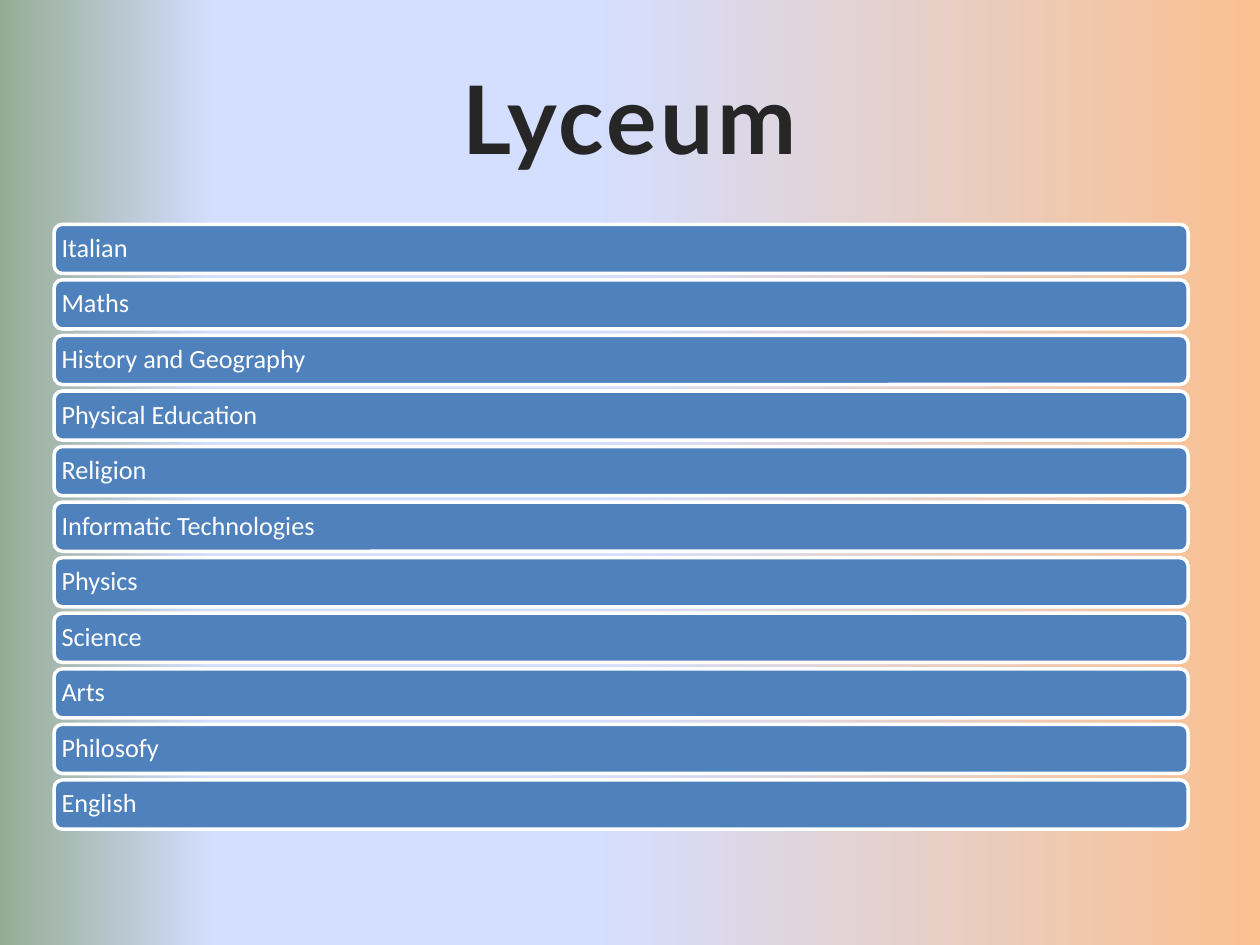
import dataclasses
import lxml.etree
import pptx
import pptx.dml.color
import pptx.enum.shapes
import pptx.enum.text
import pptx.oxml.ns
import pptx.util

Inches = pptx.util.Inches
Pt = pptx.util.Pt
RGBColor = pptx.dml.color.RGBColor
Align = pptx.enum.text.PP_ALIGN
qn = pptx.oxml.ns.qn

WHITE = RGBColor(0xFF, 0xFF, 0xFF)
BLUE = RGBColor(0x4F, 0x81, 0xBD)
DARK = RGBColor(0x26, 0x26, 0x26)
PALE = RGBColor(0xF7, 0xF9, 0xF5)
ORANGE = RGBColor(0xFA, 0xC0, 0x90)
SKY = RGBColor(0xD4, 0xDE, 0xFF)
GREEN = RGBColor(0x96, 0xAB, 0x94)

STOPS = [(0, ORANGE), (53, SKY), (83, SKY), (100, GREEN)]
COURSES = [
    "Italian", "Maths", "History and Geography", "Physical Education",
    "Religion", "Informatic Technologies", "Physics", "Science", "Arts",
    "Philosofy", "English",
]
FIRST, LAST = 1.78, 6.19


@dataclasses.dataclass
class Bar:
    label: str
    top: float
    left: float = 0.43
    width: float = 9
    height: float = 0.39


def add_fill(parent, color: RGBColor) -> None:
    solid = lxml.etree.SubElement(parent, qn("a:solidFill"))
    lxml.etree.SubElement(solid, qn("a:srgbClr"), val=str(color))


def set_text(shape, text: str, *, size: float, font: str, color: RGBColor,
             align=Align.LEFT, bold: bool = False, inset: float = 0.1,
             line: float = 1, after: float = 0):
    frame = shape.text_frame
    frame.word_wrap = True
    frame.auto_size = pptx.enum.text.MSO_AUTO_SIZE.NONE
    frame.vertical_anchor = pptx.enum.text.MSO_ANCHOR.MIDDLE
    frame.margin_left = frame.margin_right = Inches(inset)
    frame.margin_top = frame.margin_bottom = Inches(0.05)
    para = frame.paragraphs[0]
    para.alignment = align
    para.line_spacing = line
    para.space_after = Pt(after)
    run = para.add_run()
    run.text = text
    run.font.size = Pt(size)
    run.font.name = font
    run.font.bold = bold
    run.font.color.rgb = color
    return run


def paint_back(slide) -> None:
    fill = slide.background.fill
    fill.gradient()
    fill.gradient_angle = 180
    stops = slide.element.find(".//" + qn("a:gsLst"))
    for old in list(stops):
        stops.remove(old)
    for place, color in STOPS:
        stop = lxml.etree.SubElement(stops, qn("a:gs"), pos=str(place * 1000))
        lxml.etree.SubElement(stop, qn("a:srgbClr"), val=str(color))


def draw_title(slide) -> None:
    title = slide.shapes.title
    title.left, title.top = Inches(0.5), Inches(0.3)
    title.width, title.height = Inches(9), Inches(1.25)
    run = set_text(title, "Lyceum", size=54, font="Lato", color=DARK,
                   align=Align.CENTER, bold=True)
    props = run.font._element
    props.set("spc", "200")
    edge = lxml.etree.Element(qn("a:ln"), w=str(Pt(2.3)))
    add_fill(edge, PALE)
    props.insert(0, edge)


def draw_bar(slide, bar: Bar) -> None:
    shape = slide.shapes.add_shape(
        pptx.enum.shapes.MSO_SHAPE.ROUNDED_RECTANGLE, Inches(bar.left),
        Inches(bar.top), Inches(bar.width), Inches(bar.height))
    shape.shadow.inherit = False
    shape.fill.solid()
    shape.fill.fore_color.rgb = BLUE
    shape.line.color.rgb = WHITE
    shape.line.width = Pt(2)
    set_text(shape, bar.label, size=15, font="Calibri", color=WHITE,
             inset=0.04, line=0.9, after=5.25)


def main() -> None:
    deck = pptx.Presentation()
    deck.slide_width, deck.slide_height = Inches(10), Inches(7.5)
    slide = deck.slides.add_slide(deck.slide_layouts[5])
    paint_back(slide)
    draw_title(slide)
    step = (LAST - FIRST) / (len(COURSES) - 1)
    for row, label in enumerate(COURSES):
        draw_bar(slide, Bar(label, FIRST + row * step))
    deck.save("out.pptx")


if __name__ == "__main__":
    main()
